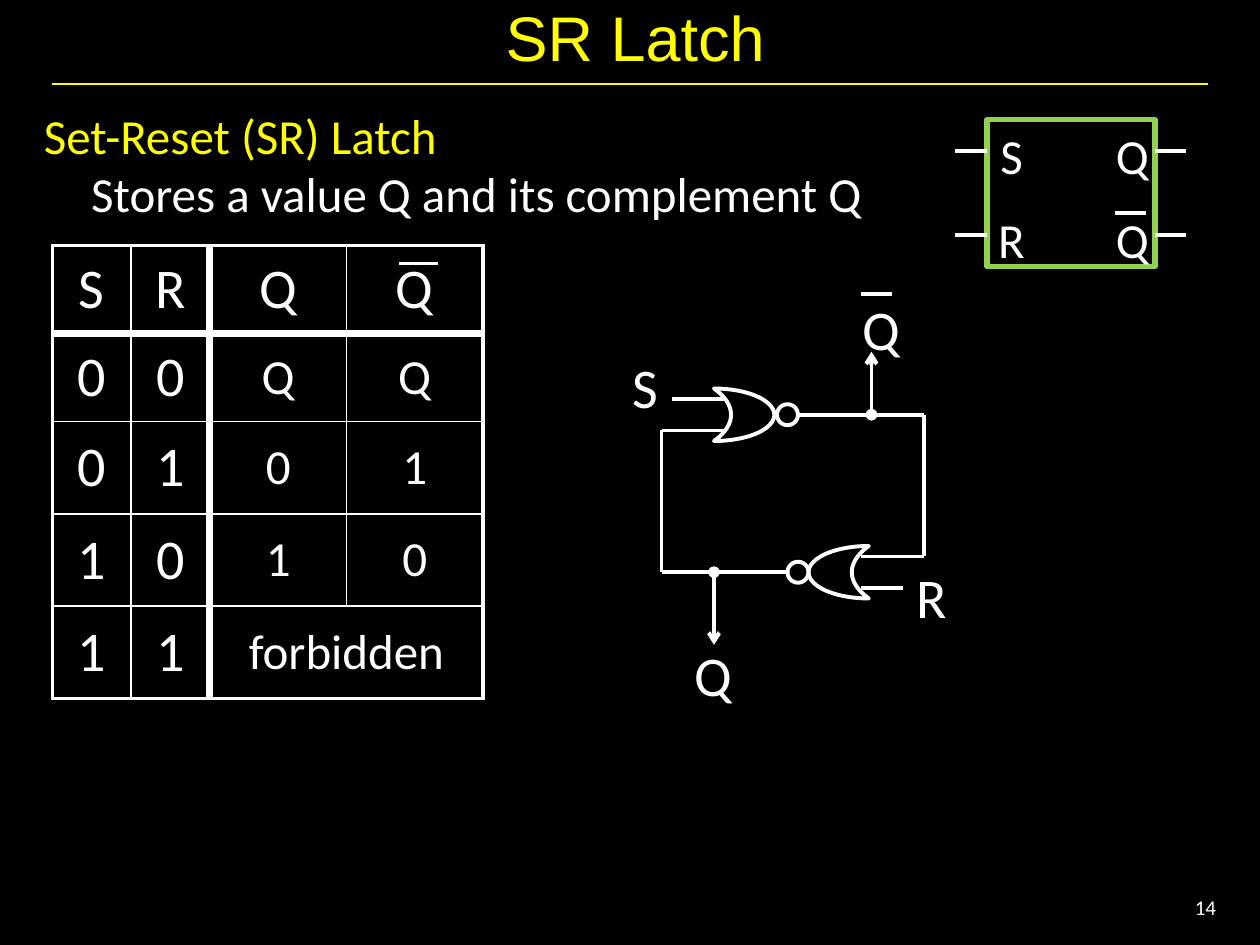
from lxml.etree import SubElement
from pptx import Presentation
from pptx.dml.color import RGBColor
from pptx.enum.shapes import MSO_CONNECTOR, MSO_SHAPE
from pptx.enum.text import MSO_ANCHOR, MSO_AUTO_SIZE, PP_ALIGN
from pptx.oxml import parse_xml
from pptx.oxml.ns import nsdecls, qn
from pptx.util import Pt

WHITE, YELLOW, GREEN, BLACK = "FFFFFF", "FFFF00", "92D050", "000000"


def color(value):
    return RGBColor.from_string(value)


class SlideBuilder:
    font = "Calibri"
    line_width = 2.25

    def __init__(self, presentation):
        self.slide = presentation.slides.add_slide(presentation.slide_layouts[5])
        self.slide.background.fill.solid()
        self.slide.background.fill.fore_color.rgb = color(BLACK)

    def set_text(self, paragraph, text, size, fill=WHITE, font=None, **formats):
        paragraph.text = text
        for name, value in formats.items():
            setattr(paragraph, name, value)
        run_font = paragraph.runs[0].font
        for name, value in {"size": Pt(size), "name": font or self.font}.items():
            setattr(run_font, name, value)
        run_font.color.rgb = color(fill)

    def title(self, text, left, top, width, height):
        shape = self.slide.shapes.title
        box = {"left": left, "top": top, "width": width, "height": height}
        for name, value in box.items():
            setattr(shape, name, Pt(value))
        shape.text_frame.vertical_anchor = MSO_ANCHOR.MIDDLE
        self.set_text(shape.text_frame.paragraphs[0], text, 36, YELLOW, "Arial",
                      alignment=PP_ALIGN.CENTER)

    def text_frame(self, left, top, width, height, **formats):
        box = self.slide.shapes.add_textbox(Pt(left), Pt(top), Pt(width), Pt(height))
        for name, value in {"word_wrap": True, **formats}.items():
            setattr(box.text_frame, name, value)
        return box.text_frame

    def label(self, text, center, top, size):
        """Place a single letter centred on a horizontal position."""
        width = 34
        frame = self.text_frame(center - width / 2, top, width, size * 1.56,
                                word_wrap=False,
                                auto_size=MSO_AUTO_SIZE.SHAPE_TO_FIT_TEXT)
        self.set_text(frame.paragraphs[0], text, size,
                      alignment=PP_ALIGN.CENTER, line_spacing=1.16)

    def line(self, start, end, width=line_width, stroke=WHITE, head=None, tail=None):
        connector = self.slide.shapes.add_connector(
            MSO_CONNECTOR.STRAIGHT, *map(Pt, (*start, *end)))
        connector.line.width = Pt(width)
        connector.line.color.rgb = color(stroke)
        properties = connector._element.spPr.find(qn("a:ln"))
        for tag, kind in (("a:headEnd", head), ("a:tailEnd", tail)):
            if kind:
                SubElement(properties, qn(tag), type=kind)
        SubElement(connector._element.spPr, qn("a:effectLst"))

    def outline(self, preset, left, top, width, height,
                stroke=WHITE, weight=line_width):
        shape = self.slide.shapes.add_shape(
            preset, Pt(left), Pt(top), Pt(width), Pt(height))
        shape.shadow.inherit = False
        shape.fill.background()
        shape.line.color.rgb = color(stroke)
        shape.line.width = Pt(weight)
        return shape

    def nor_gate(self, left, top, bubble_left, rotation=0):
        gate = self.outline(MSO_SHAPE.MOON, left, top, 34.5, 30)
        gate.adjustments[0] = 0.717
        gate.rotation = rotation
        self.outline(MSO_SHAPE.OVAL, bubble_left, top + 9, 12, 12)

    def border(self, cell, sides):
        properties = cell._tc.get_or_add_tcPr()
        for index, (side, width) in enumerate(sides.items()):
            properties.insert(index, parse_xml(
                f'<a:ln{side} {nsdecls("a")} w="{Pt(width)}"><a:solidFill>'
                f'<a:srgbClr val="{WHITE}"/></a:solidFill></a:ln{side}>'))

    def truth_table(self, left, top, widths, heights, rows):
        """Draw the table with heavy rules below the header and after the inputs."""
        table = self.slide.shapes.add_table(
            len(heights), len(widths), Pt(left), Pt(top),
            Pt(sum(widths)), Pt(sum(heights))).table
        table.first_row = table.horz_banding = False
        for column, width in zip(table.columns, widths):
            column.width = Pt(width)
        for row, height in zip(table.rows, heights):
            row.height = Pt(height)
        table.cell(4, 2).merge(table.cell(4, 3))
        vertical = [2.25, 1, 4.5, 1, 2.25]
        horizontal = [2.25, 4.5, 1, 1, 1, 2.25]
        for y, row in enumerate(rows):
            for x, text in enumerate(row):
                cell = table.cell(y, x)
                cell.fill.background()
                cell.vertical_anchor = MSO_ANCHOR.MIDDLE
                span = cell.span_width if cell.is_merge_origin else 1
                self.border(cell, {"L": vertical[x], "R": vertical[x + span],
                                   "T": horizontal[y], "B": horizontal[y + 1]})
                self.set_text(cell.text_frame.paragraphs[0], text,
                              32 if y == 0 or x < 2 else 28,
                              alignment=PP_ALIGN.CENTER)


def add_heading(builder):
    builder.line((30, 48), (690.5, 48), 0.75, YELLOW)
    builder.title("SR Latch", 30, 0, 666, 42)
    frame = builder.text_frame(18, 62.5, 684, 90)
    spacing = {"line_spacing": 0.82, "space_before": Pt(5.6)}
    builder.set_text(frame.paragraphs[0], "Set-Reset (SR) Latch", 28, YELLOW, **spacing)
    detail = frame.add_paragraph()
    builder.set_text(detail, "Stores a value Q and its complement Q", 28, **spacing)
    detail._p.get_or_add_pPr().set("marL", str(Pt(27)))
    number = builder.text_frame(642, 504, 60, 29, vertical_anchor=MSO_ANCHOR.MIDDLE)
    builder.set_text(number.paragraphs[0], "14", 12, alignment=PP_ALIGN.RIGHT)


def add_truth_table(builder):
    rows = [("S", "R", "Q", "Q"), ("0", "0", "Q", "Q"), ("0", "1", "0", "1"),
            ("1", "0", "1", "0"), ("1", "1", "forbidden")]
    builder.truth_table(30, 140.4, [45, 45, 78, 78],
                        [50, 50.5, 52.8, 52.8, 52.8], rows)
    builder.line((228, 150.5), (250.5, 150.5), 2)


def add_latch_symbol(builder):
    builder.outline(MSO_SHAPE.RECTANGLE, 564, 68.4, 96, 84, GREEN, 3)
    for letter, y in (("S", 86.4), ("R", 134.4)):
        for x in (546, 660):
            builder.line((x, y), (x + 18, y))
        builder.label(letter, 578, y - 23.6, 28)
        builder.label("Q", 647, y - 23.6, 28)
    builder.line((637, 121.8), (655, 121.8))


def add_circuit(builder):
    left, right, upper, lower = 378, 528, 237, 327
    wires = [
        ((450, lower), (left, lower)), ((left, lower), (left, 246)),
        ((left, 246), (414, 246)), ((414, 228), (384, 228)),
        ((456, upper), (right, upper)), ((right, upper), (right, 318)),
        ((right, 318), (492, 318)), ((492, 336), (516, 336)),
    ]
    for start, end in wires:
        builder.line(start, end)
    builder.nor_gate(408, upper - 15, 444, rotation=180)
    builder.nor_gate(462, lower - 15, 450)
    for x, tip, y in ((498, 201, upper), (408, 368.5, lower)):
        builder.line((x, tip), (x, y), head="arrow", tail="oval")
    for letter, center, top in (("S", 369, 192), ("R", 532.5, 312),
                                ("Q", 407, 356.5), ("Q", 502.5, 158.5)):
        builder.label(letter, center, top, 32)
    builder.line((492, 168), (510, 168))


def main():
    presentation = Presentation()
    presentation.slide_width, presentation.slide_height = Pt(720), Pt(540)
    builder = SlideBuilder(presentation)
    add_heading(builder)
    add_truth_table(builder)
    add_latch_symbol(builder)
    add_circuit(builder)
    presentation.save("out.pptx")


if __name__ == "__main__":
    main()
